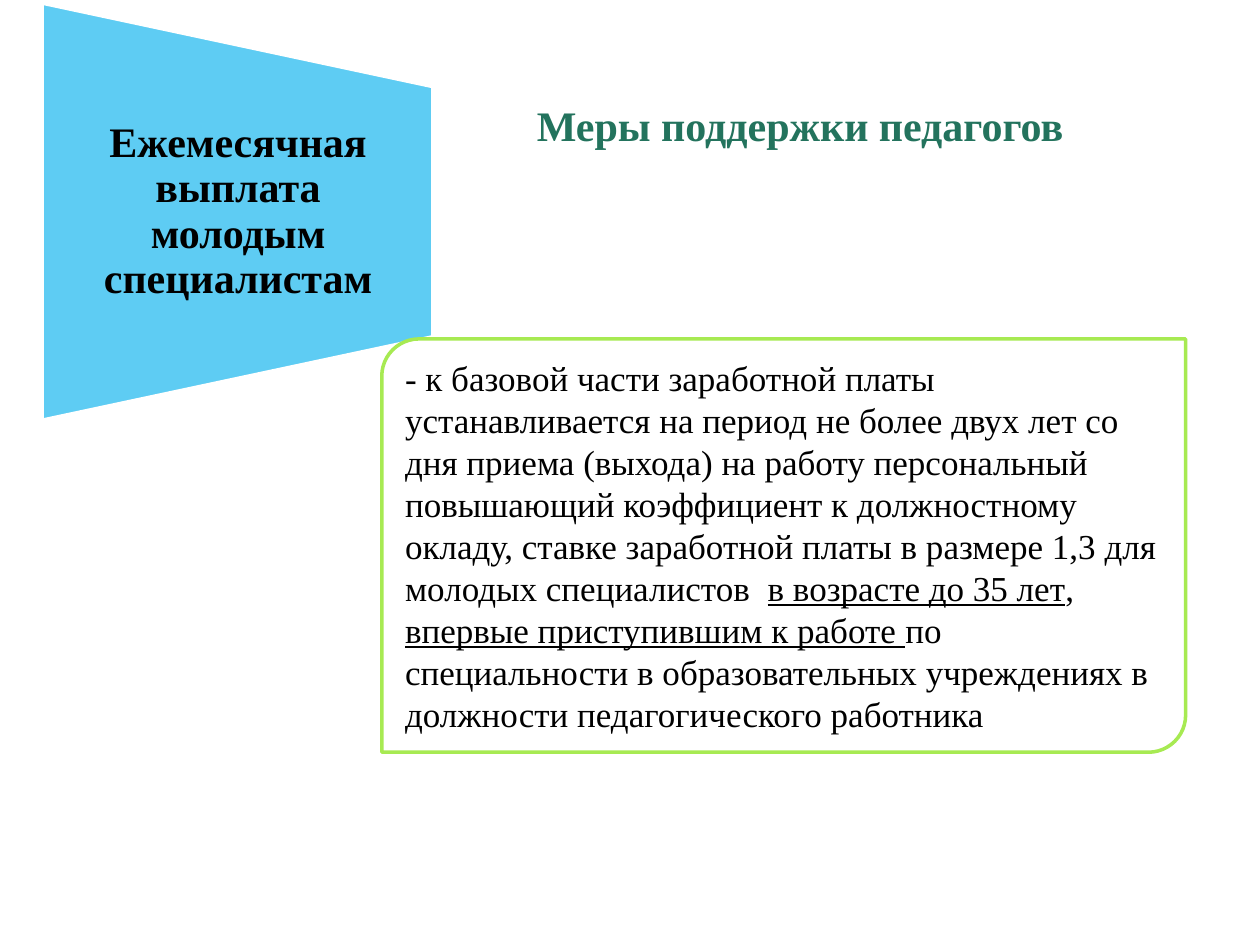
from dataclasses import dataclass

from pptx import Presentation
from pptx.dml.color import RGBColor
from pptx.enum.shapes import MSO_SHAPE as Preset
from pptx.enum.text import MSO_ANCHOR as Anchor, MSO_AUTO_SIZE as AutoSize, PP_ALIGN as Align
from pptx.util import Inches, Pt

SLIDE_WIDTH, SLIDE_HEIGHT = Inches(10), Inches(7.5)
FONT = "Times New Roman"
BLACK = RGBColor(0x00, 0x00, 0x00)
WHITE = RGBColor(0xFF, 0xFF, 0xFF)
GREEN = RGBColor(0x23, 0x73, 0x5D)
SKY = RGBColor(0x5E, 0xCC, 0xF3)
LIME = RGBColor(0xA7, 0xEA, 0x52)


@dataclass(frozen=True)
class Box:
    left: float
    top: float
    width: float
    height: float

    def lengths(self) -> tuple[int, int, int, int]:
        return (int(self.left * SLIDE_WIDTH), int(self.top * SLIDE_HEIGHT),
                int(self.width * SLIDE_WIDTH), int(self.height * SLIDE_HEIGHT))


@dataclass(frozen=True)
class Panel:
    preset: Preset
    box: Box
    fill: RGBColor
    outline: RGBColor
    rotation: int = 0


@dataclass(frozen=True)
class Phrase:
    text: str
    underlined: bool = False


TITLE_BOX = Box(0.344, 0.084, 0.582, 0.095)
MEASURE_BOX = Box(0.034, 0.092, 0.31, 0.264)
MEASURE = Panel(Preset.FLOWCHART_MANUAL_OPERATION,
                Box(0.023, 0.0173, 0.331, 0.4133), SKY, WHITE, 270)
TERMS = Panel(Preset.ROUND_2_DIAG_RECTANGLE,
              Box(0.303, 0.3587, 0.638, 0.4373), WHITE, LIME)
TERMS_PHRASES = (
    Phrase("- к базовой части заработной платы устанавливается на период не более "
           "двух лет со дня приема (выхода) на работу персональный повышающий "
           "коэффициент к должностному окладу, ставке заработной платы в размере 1,3 "
           "для молодых специалистов  "),
    Phrase("в возрасте до 35 лет", True),
    Phrase(", "),
    Phrase("впервые приступившим к работе ", True),
    Phrase("по специальности в образовательных учреждениях в должности "
           "педагогического работника"),
)


def place(shape, box: Box) -> None:
    shape.left, shape.top, shape.width, shape.height = box.lengths()


def style(run, size: int, color: RGBColor, bold: bool = False,
          underlined: bool = False) -> None:
    run.font.name = FONT
    run.font.size = Pt(size)
    run.font.color.rgb = color
    run.font.bold = bold
    run.font.underline = underlined


def write_heading(frame, text: str, color: RGBColor) -> None:
    frame.text = text
    frame.word_wrap = True
    frame.auto_size = AutoSize.NONE
    frame.vertical_anchor = Anchor.MIDDLE
    paragraph = frame.paragraphs[0]
    paragraph.alignment = Align.CENTER
    style(paragraph.runs[0], 24, color, bold=True)


def draw_panel(slide, panel: Panel):
    shape = slide.shapes.add_shape(panel.preset, *panel.box.lengths())
    shape.rotation = panel.rotation
    shape.shadow.inherit = False
    shape.fill.solid()
    shape.fill.fore_color.rgb = panel.fill
    shape.line.color.rgb = panel.outline
    shape.line.width = Pt(2)
    return shape


def write_phrases(frame, phrases: tuple[Phrase, ...]) -> None:
    frame.word_wrap = True
    frame.auto_size = AutoSize.SHAPE_TO_FIT_TEXT
    frame.vertical_anchor = Anchor.TOP
    paragraph = frame.paragraphs[0]
    paragraph.alignment = Align.LEFT
    for phrase in phrases:
        run = paragraph.add_run()
        run.text = phrase.text
        style(run, 20, BLACK, underlined=phrase.underlined)


def main() -> None:
    deck = Presentation()
    deck.slide_width, deck.slide_height = SLIDE_WIDTH, SLIDE_HEIGHT
    slide = deck.slides.add_slide(deck.slide_layouts[5])

    title = slide.shapes.title
    place(title, TITLE_BOX)
    write_heading(title.text_frame, "Меры поддержки педагогов", GREEN)

    draw_panel(slide, MEASURE)
    measure = slide.shapes.add_textbox(*MEASURE_BOX.lengths()).text_frame
    write_heading(measure, "Ежемесячная выплата молодым специалистам", BLACK)
    measure.margin_left = measure.margin_right = Inches(0.17)
    measure.margin_top = measure.margin_bottom = 0
    measure.paragraphs[0].line_spacing = 0.9

    terms = draw_panel(slide, TERMS)
    terms.adjustments[0], terms.adjustments[1] = 0.09, 0
    write_phrases(terms.text_frame, TERMS_PHRASES)

    deck.save("out.pptx")


if __name__ == "__main__":
    main()
